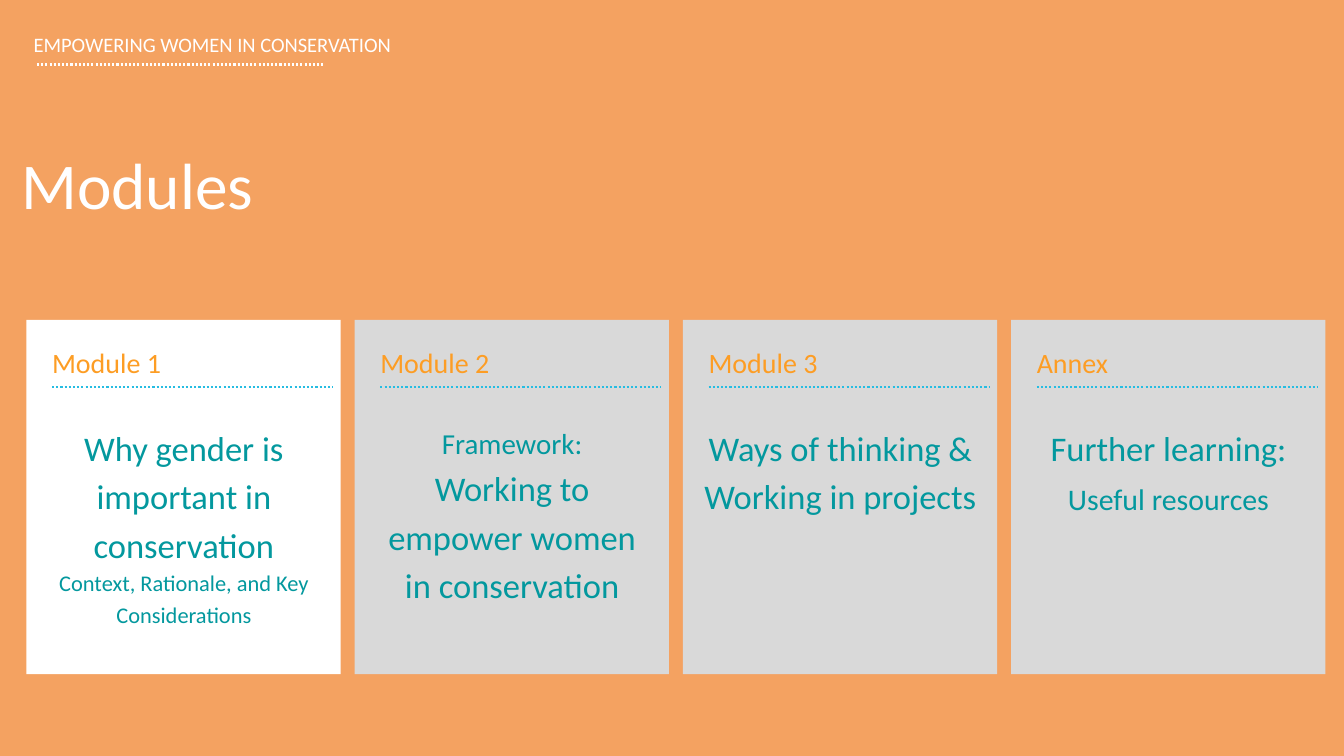
from dataclasses import dataclass

from lxml.etree import SubElement
from pptx import Presentation
from pptx.dml.color import RGBColor
from pptx.enum.dml import MSO_LINE
from pptx.enum.shapes import MSO_CONNECTOR, MSO_SHAPE
from pptx.enum.text import MSO_ANCHOR, MSO_AUTO_SIZE, PP_ALIGN
from pptx.oxml.ns import qn
from pptx.util import Cm, Pt


@dataclass(frozen=True)
class Theme:
    font: str = "Calibri"
    background: str = "F4A261"
    white: str = "FFFFFF"
    grey: str = "D9D9D9"
    orange: str = "FD9D24"
    teal: str = "03989E"
    blue: str = "26BDE2"
    title: int = 70
    main: int = 37
    resource: int = 32
    lead: int = 31
    label: int = 30
    note: int = 24
    header: int = 22
    rule: float = 2.25


THEME = Theme()

# Label, fill, and lines of (text, size, line spacing) for each module
MODULES = [
    ("Module 1", THEME.white, [
        ("Why gender is important in conservation", THEME.main, 51.8),
        ("Context, Rationale, and Key Considerations", THEME.note, 33.6)]),
    ("Module 2", THEME.grey, [
        ("Framework:", THEME.lead, 43.4),
        ("Working to empower women in conservation", THEME.main, 51.8)]),
    ("Module 3", THEME.grey, [
        ("Ways of thinking & Working in projects", THEME.main, 51.8)]),
    ("Annex", THEME.grey, [
        ("Further learning:", THEME.main, 51.8),
        ("Useful resources", THEME.resource, 51.8)]),
]


def colour(value):
    return RGBColor.from_string(value)


def set_values(target, values):
    for name, value in values.items():
        setattr(target, name, value)


def fill_text(frame, lines, text_colour, align=PP_ALIGN.LEFT):
    set_values(frame, dict(
        margin_left=0, margin_top=0, margin_right=0, margin_bottom=0,
        word_wrap=True, auto_size=MSO_AUTO_SIZE.NONE,
        vertical_anchor=MSO_ANCHOR.TOP))
    for index, (text, size, spacing) in enumerate(lines):
        para = frame.add_paragraph() if index else frame.paragraphs[0]
        set_values(para, dict(alignment=align, line_spacing=Pt(spacing),
                              space_before=Pt(0)))
        span = para.add_run()
        span.text = text
        set_values(span.font, dict(name=THEME.font, size=Pt(size)))
        span.font.color.rgb = colour(text_colour)


def add_text(page, box, lines, text_colour, align=PP_ALIGN.LEFT):
    shape = page.shapes.add_textbox(*map(Cm, box))
    fill_text(shape.text_frame, lines, text_colour, align)


def add_dotted_rule(page, left, top, width, line_colour):
    rule = page.shapes.add_connector(
        MSO_CONNECTOR.STRAIGHT, Cm(left), Cm(top), Cm(left + width), Cm(top))
    rule.line.color.rgb = colour(line_colour)
    set_values(rule.line, dict(width=Pt(THEME.rule),
                               dash_style=MSO_LINE.ROUND_DOT))
    SubElement(rule._element.spPr, qn("a:effectLst"))


def add_header(page, box):
    left, top, width, height = box
    add_text(page, box,
             [("EMPOWERING WOMEN IN CONSERVATION", THEME.header, 26.4)],
             THEME.white)
    add_dotted_rule(page, left + 0.13, top + 1.22, 10.87, THEME.white)


def add_title(page, box):
    title = page.shapes.title
    set_values(title, dict(zip(("left", "top", "width", "height"),
                               map(Cm, box))))
    fill_text(title.text_frame, [("Modules", THEME.title, 84)], THEME.white)


def add_card(page, box, label, fill, lines):
    left, top, width, height = box
    inner = 10.6

    # Panel
    panel = page.shapes.add_shape(MSO_SHAPE.RECTANGLE, *map(Cm, box))
    panel.shadow.inherit = False
    panel.fill.solid()
    panel.fill.fore_color.rgb = colour(fill)
    panel.line.fill.background()

    # Label with its rule, then the centred description
    add_text(page, (left + 0.97, top + 0.77, inner, 1.45),
             [(label, THEME.label, 42)], THEME.orange)
    add_dotted_rule(page, left + 0.97, top + 2.55, inner, THEME.blue)
    add_text(page, (left + 0.65, top + 3.79, inner, 8.5),
             lines, THEME.teal, PP_ALIGN.CENTER)


def add_cards(page, box):
    left, top, width, height = box
    card_width = 11.88
    step = (width - card_width) / (len(MODULES) - 1)
    for index, module in enumerate(MODULES):
        add_card(page, (left + index * step, top, card_width, height), *module)


def main():
    deck = Presentation()
    set_values(deck, dict(slide_width=Cm(50.8), slide_height=Cm(28.58)))
    page = deck.slides.add_slide(deck.slide_layouts[5])
    page.background.fill.solid()
    page.background.fill.fore_color.rgb = colour(THEME.background)

    add_header(page, (1.27, 1.22, 18.2, 0.95))
    add_title(page, (0.81, 5.44, 27.03, 2.97))
    add_cards(page, (1, 12.09, 49.1, 13.4))
    deck.save("out.pptx")


if __name__ == "__main__":
    main()
